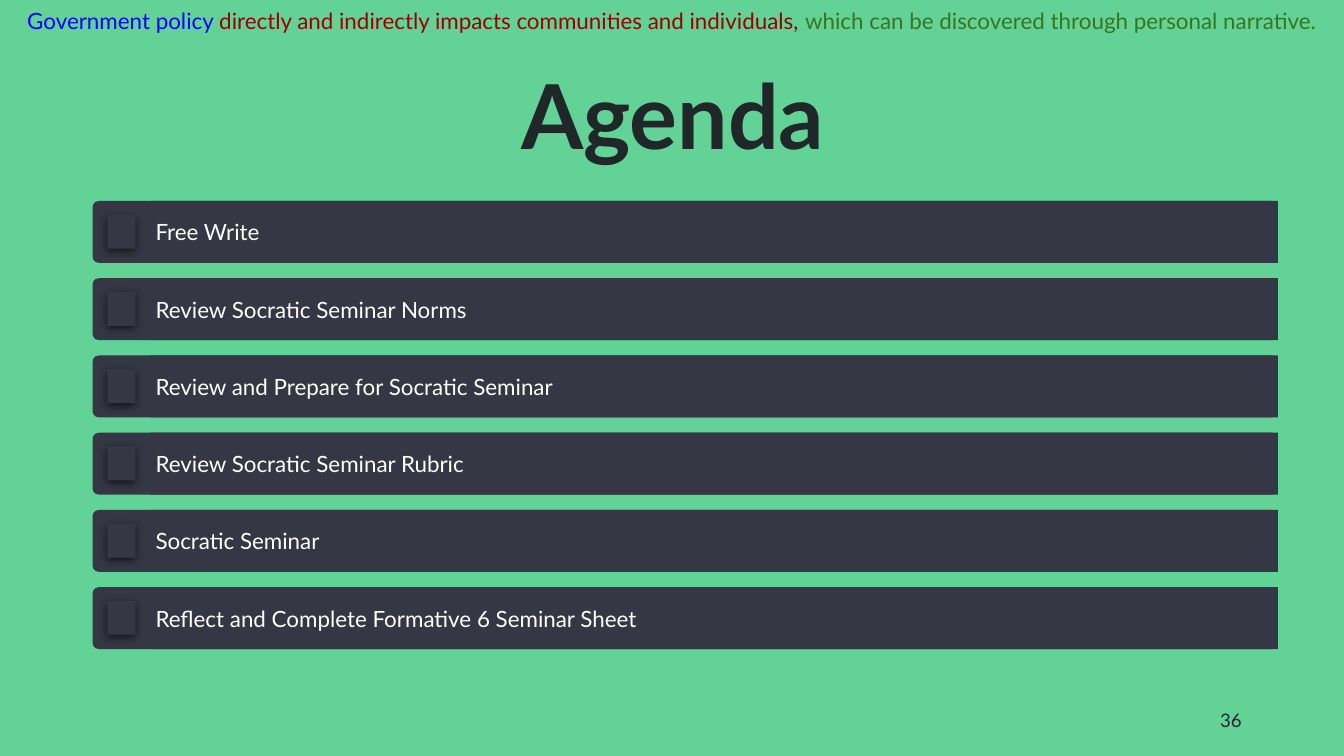
"""Build the seminar agenda slide."""
from dataclasses import dataclass

from lxml.etree import SubElement
from pptx import Presentation
from pptx.dml.color import RGBColor
from pptx.enum.shapes import MSO_SHAPE as Shape
from pptx.enum.text import MSO_ANCHOR as Anchor, MSO_AUTO_SIZE as Fit, PP_ALIGN as Align
from pptx.oxml.ns import qn
from pptx.util import Cm, Pt


@dataclass(frozen=True)
class Theme:
    font: str = "Lato"
    ground: str = "63D297"
    bar: str = "353744"
    ink: str = "202729"
    light: str = "FFFFFF"
    policy: str = "0000FF"
    impact: str = "980000"
    narrative: str = "38761D"
    shadow: str = "000000"
    title_size: int = 48
    body_size: int = 12
    number_size: int = 10


class AgendaSlide:
    def __init__(self, slide, theme):
        self.slide = slide
        self.theme = theme

    def apply(self, target, values):
        for name, value in values.items():
            setattr(target, name, value)

    def place(self, target, box):
        self.apply(target, dict(zip(("left", "top", "width", "height"), map(Cm, box))))

    def fill_text(self, target, pieces, size, align, anchor, insets, spacing=1.0, bold=False):
        frame = target.text_frame
        side, end = map(Cm, insets)
        self.apply(frame, {
            "word_wrap": True, "auto_size": Fit.NONE, "vertical_anchor": anchor,
            "margin_left": side, "margin_right": side,
            "margin_top": end, "margin_bottom": end,
        })
        paragraph = frame.paragraphs[0]
        self.apply(paragraph, {"alignment": align, "line_spacing": spacing})
        for words, color in pieces:
            run = paragraph.add_run()
            run.text = words
            self.apply(run.font, {"name": self.theme.font, "size": Pt(size), "bold": bold})
            run.font.color.rgb = RGBColor.from_string(color)

    def title(self, words, box):
        heading = self.slide.shapes.title
        self.place(heading, box)
        self.fill_text(heading, [(words, self.theme.ink)], self.theme.title_size,
                       Align.CENTER, Anchor.MIDDLE, (0.18, 0.1), 0.9, True)

    def text(self, pieces, box, **style):
        caption = self.slide.shapes.add_textbox(*map(Cm, box))
        self.fill_text(caption, pieces, **style)

    def block(self, parent, kind, box, color):
        block = parent.shapes.add_shape(kind, *map(Cm, box))
        block.shadow.inherit = False
        block.fill.solid()
        block.fill.fore_color.rgb = RGBColor.from_string(color)
        block.line.fill.background()
        return block

    def ground(self, box):
        ground = self.block(self.slide, Shape.RECTANGLE, box, self.theme.ground)
        self.slide.shapes._spTree.insert(2, ground._element)

    def cast_shadow(self, block):
        effects = block._element.spPr.find(qn("a:effectLst"))
        outer = SubElement(effects, qn("a:outerShdw"), blurRad=str(Pt(4.5)),
                           dist=str(Pt(1.5)), dir="5400000", algn="ctr", rotWithShape="0")
        color = SubElement(outer, qn("a:srgbClr"), val=self.theme.shadow)
        SubElement(color, qn("a:alpha"), val="63000")

    def agenda(self, items, top, pitch, height):
        group = self.slide.shapes.add_group_shape()
        for index, item in enumerate(items):
            y = top + index * pitch
            bar = self.block(group, Shape.ROUNDED_RECTANGLE,
                             (1.75, y, 22.4, height), self.theme.bar)
            bar.adjustments[0] = 0.1
            marker = self.block(group, Shape.RECTANGLE,
                                (2.03, y + 0.26, 0.53, 0.64), self.theme.bar)
            self.cast_shadow(marker)
            label = self.block(group, Shape.RECTANGLE,
                               (2.84, y, 21.31, height), self.theme.bar)
            self.fill_text(label, [(item, self.theme.light)], self.theme.body_size,
                           Align.LEFT, Anchor.MIDDLE, (0.1, 0.1))


def main():
    theme = Theme()
    width, height = 25.4, 14.29
    deck = Presentation()
    deck.slide_width, deck.slide_height = Cm(width), Cm(height)
    page = AgendaSlide(deck.slides.add_slide(deck.slide_layouts[5]), theme)

    page.ground((0, 0, width, height))
    page.title("Agenda", (4.5, 1.24, 16.43, 2.08))
    page.agenda([
        "Free Write",
        "Review Socratic Seminar Norms",
        "Review and Prepare for Socratic Seminar",
        "Review Socratic Seminar Rubric",
        "Socratic Seminar",
        "Reflect and Complete Formative 6 Seminar Sheet",
    ], top=3.8, pitch=1.46, height=1.17)
    page.text([
        ("Government policy ", theme.policy),
        ("directly and indirectly impacts communities and individuals, ", theme.impact),
        ("which can be discovered through personal narrative.", theme.narrative),
    ], (0, -0.08, width, 0.81), size=theme.body_size, align=Align.CENTER,
        anchor=Anchor.TOP, insets=(0.25, 0.25), spacing=0.95)
    page.text([("36", theme.ink)], (17.93, 13.23, 5.72, 0.76), size=theme.number_size,
              align=Align.RIGHT, anchor=Anchor.MIDDLE, insets=(0.18, 0.1))
    deck.save("out.pptx")


if __name__ == "__main__":
    main()
